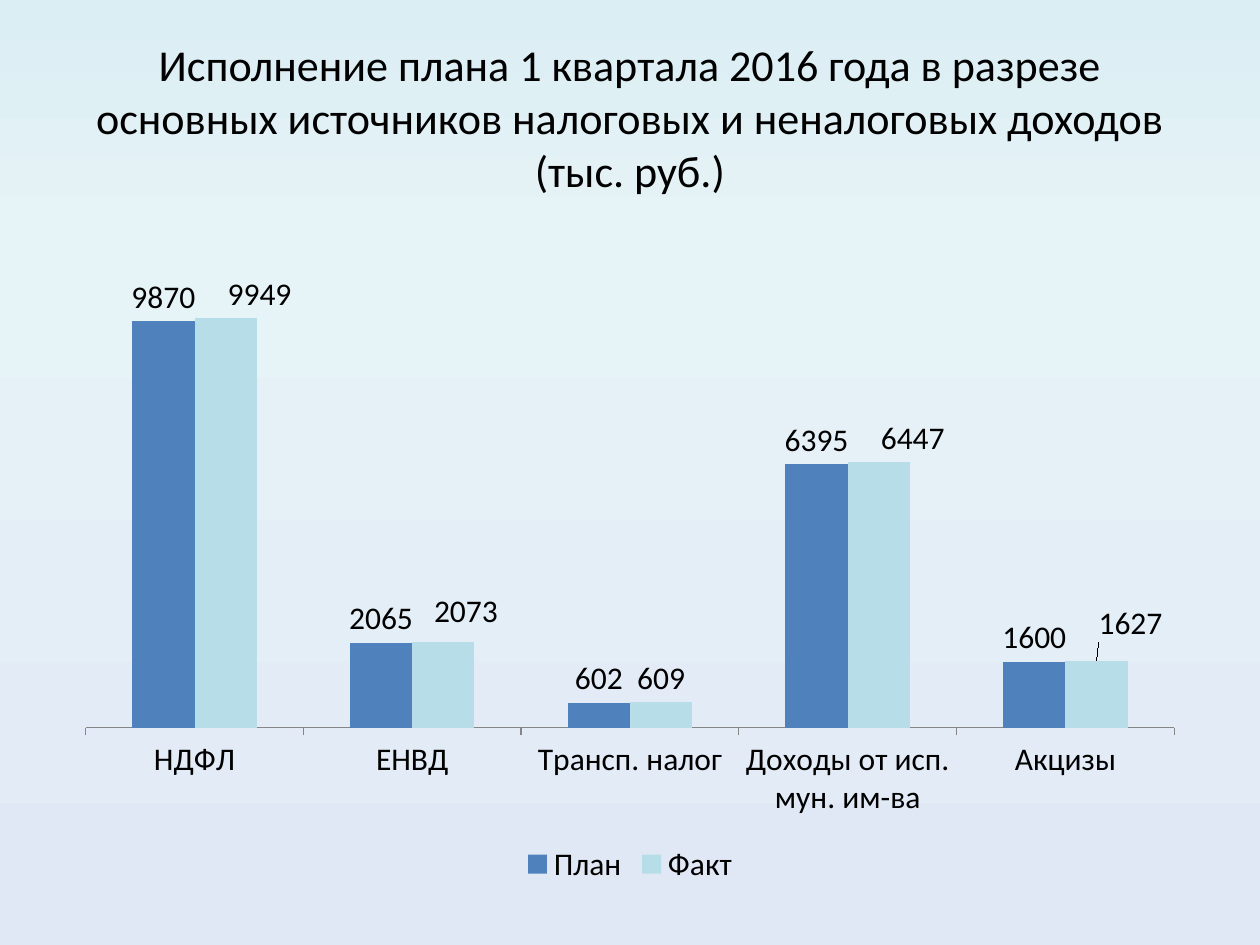
from copy import deepcopy

from lxml.etree import SubElement
from pptx import Presentation
from pptx.chart.data import CategoryChartData
from pptx.dml.color import RGBColor
from pptx.enum.chart import XL_CHART_TYPE as ChartType
from pptx.enum.chart import XL_LABEL_POSITION as LabelPosition
from pptx.enum.chart import XL_LEGEND_POSITION as LegendPosition
from pptx.enum.chart import XL_TICK_MARK as TickMark
from pptx.enum.text import MSO_ANCHOR as Anchor
from pptx.enum.text import PP_ALIGN as Align
from pptx.oxml.ns import qn
from pptx.util import Pt

TITLE = ("Исполнение плана 1 квартала 2016 года в разрезе основных источников "
         "налоговых и неналоговых доходов (тыс. руб.)")
CATEGORIES = ["НДФЛ", "ЕНВД", "Трансп. налог", "Доходы от исп. мун. им-ва", "Акцизы"]
SERIES = {
    "План": [9870, 2065, 602, 6395, 1600],
    "Факт": [9949, 2073, 609, 6447, 1627],
}
# Category index -> label shift, as a share of the chart's width and height
ACTUAL_LABEL_SHIFTS = {0: (0.03, 0), 1: (0.02, -0.01), 3: (0.03, 0), 4: (0.03, -0.02)}

THEME = {
    "font": "Calibri",
    "title_size": 25.2,
    "chart_size": 18,
    "text": "000000",
    "axis": "868686",
    "series": ["4F81BD", "B7DEE8"],
    "background": [(0, "DBEEF4"), (0.25, "E6F3F7"), (1, "E1E8F5")],
}
MARGIN, CONTENT_WIDTH = 36, 648


def color(name):
    return RGBColor.from_string(name)


def style_font(font, size):
    font.name = THEME["font"]
    font.size = Pt(size)
    font.color.rgb = color(THEME["text"])


def paint_background(slide):
    fill = slide.background.fill
    fill.gradient()
    fill.gradient_angle = 270
    stop_list = next(slide.element.iter(qn("a:gsLst")))
    stop_list.insert(1, deepcopy(stop_list[0]))
    for stop, (position, name) in zip(fill.gradient_stops, THEME["background"]):
        stop.position = position
        stop.color.rgb = color(name)


def add_title(slide):
    box = slide.shapes.add_textbox(Pt(MARGIN), Pt(21.6), Pt(CONTENT_WIDTH), Pt(90))
    frame = box.text_frame
    frame.word_wrap = True
    frame.vertical_anchor = Anchor.MIDDLE
    paragraph = frame.paragraphs[0]
    paragraph.alignment = Align.CENTER
    run = paragraph.add_run()
    run.text = TITLE
    style_font(run.font, THEME["title_size"])


def shift_labels(series, shifts):
    """Move single data labels away from their default place."""
    for index in shifts:
        series.points[index].data_label.position = LabelPosition.OUTSIDE_END
    for label, shift in zip(series._element.iter(qn("c:dLbl")), shifts.values()):
        layout = SubElement(label, qn("c:layout"))
        label.insert(1, layout)
        manual = SubElement(layout, qn("c:manualLayout"))
        for axis, value in zip("xy", shift):
            SubElement(manual, qn(f"c:{axis}")).set("val", str(value))


def add_chart(slide):
    data = CategoryChartData()
    data.categories = CATEGORIES
    for name, values in SERIES.items():
        data.add_series(name, values)
    chart = slide.shapes.add_chart(
        ChartType.COLUMN_CLUSTERED, Pt(MARGIN), Pt(126), Pt(CONTENT_WIDTH), Pt(382.32), data
    ).chart
    style_font(chart.font, THEME["chart_size"])
    chart.has_title = False
    chart.has_legend = True
    chart.legend.position = LegendPosition.BOTTOM
    chart.legend.include_in_layout = False

    chart.value_axis.visible = False
    chart.value_axis.has_major_gridlines = False
    chart.value_axis.minimum_scale = 0
    chart.value_axis.maximum_scale = 12000
    chart.category_axis.major_tick_mark = TickMark.OUTSIDE
    chart.category_axis.format.line.color.rgb = color(THEME["axis"])

    plot = chart.plots[0]
    plot.gap_width = 150
    plot.overlap = 0
    plot.vary_by_categories = False
    for series, name in zip(plot.series, THEME["series"]):
        series.format.fill.solid()
        series.format.fill.fore_color.rgb = color(name)
        series.data_labels.show_value = True
        series.data_labels.position = LabelPosition.OUTSIDE_END
    shift_labels(plot.series[1], ACTUAL_LABEL_SHIFTS)


def main():
    presentation = Presentation()
    presentation.slide_width, presentation.slide_height = Pt(720), Pt(540)
    slide = presentation.slides.add_slide(presentation.slide_layouts[6])
    paint_background(slide)
    add_title(slide)
    add_chart(slide)
    presentation.save("out.pptx")


if __name__ == "__main__":
    main()
